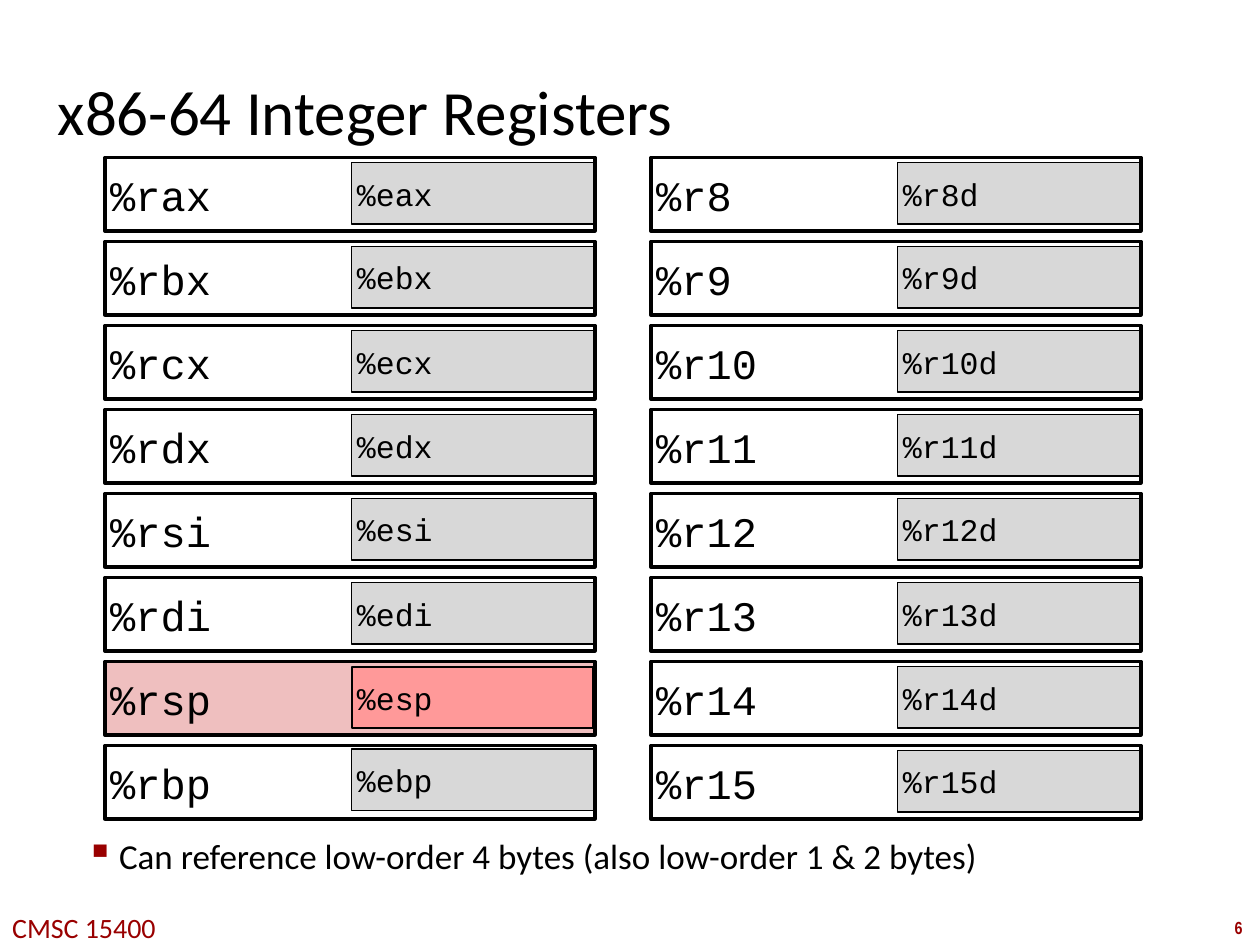
import pptx
import pptx.dml.color
import pptx.enum.shapes
import pptx.enum.text
import pptx.oxml.ns
import pptx.util
from lxml import etree

Pt = pptx.util.Pt
ALIGN = pptx.enum.text.PP_ALIGN
ANCHOR = pptx.enum.text.MSO_ANCHOR

COLORS = {
    "ink": "000000",
    "accent": "990000",
    "half": "D8D8D8",
    "stack": "EFBFBF",
    "stack_half": "FF9999",
}
COLUMNS = [
    (60, [(f"%r{name}", f"%e{name}") for name in ("ax", "bx", "cx", "dx", "si", "di", "sp", "bp")]),
    (372, [(f"%r{number}", f"%r{number}d") for number in range(8, 16)]),
]
FIRST_TOP, ROW_STEP = 90, 48


def color(name):
    return pptx.dml.color.RGBColor.from_string(COLORS[name])


class SlideBuilder:
    body_font = "Calibri"
    code_font = "Courier New"
    inset = 3

    def __init__(self, slide):
        self.slide = slide

    def set_text(self, shape, text, size, font, ink="ink", bold=False, align=ALIGN.LEFT, anchor=ANCHOR.MIDDLE):
        frame = shape.text_frame
        frame.text = text
        frame.vertical_anchor = anchor
        frame.margin_left = frame.margin_right = Pt(self.inset)
        frame.margin_top = frame.margin_bottom = Pt(self.inset)
        paragraph = frame.paragraphs[0]
        paragraph.alignment = align
        style = paragraph.runs[0].font
        style.name, style.size, style.bold = font, Pt(size), bold
        style.color.rgb = color(ink)
        return paragraph

    def text(self, box, text, size, wrap=True, font=body_font, **options):
        shape = self.slide.shapes.add_textbox(*map(Pt, box))
        paragraph = self.set_text(shape, text, size, font, **options)
        shape.text_frame.word_wrap = wrap
        return paragraph

    def indent(self, paragraph, left, first):
        properties = paragraph._p.get_or_add_pPr()
        properties.set("marL", str(Pt(left)))
        properties.set("indent", str(Pt(first)))
        return properties

    def bullet(self, box, text, size):
        paragraph = self.text(box, text, size, anchor=ANCHOR.TOP)
        paragraph.level = 1
        properties = self.indent(paragraph, 40, -19)
        qn = pptx.oxml.ns.qn
        bullet_color = etree.SubElement(properties, qn("a:buClr"))
        etree.SubElement(bullet_color, qn("a:srgbClr"), val=COLORS["accent"])
        etree.SubElement(properties, qn("a:buSzPct"), val="110000")
        etree.SubElement(properties, qn("a:buChar"), char="▪")

    def rectangle(self, box, text, size, line_width, fill=None):
        shape = self.slide.shapes.add_shape(pptx.enum.shapes.MSO_SHAPE.RECTANGLE, *map(Pt, box))
        shape.shadow.inherit = False
        if fill:
            shape.fill.solid()
            shape.fill.fore_color.rgb = color(fill)
        else:
            shape.fill.background()
        shape.line.color.rgb = color("ink")
        shape.line.width = Pt(line_width)
        self.set_text(shape, text, size, self.code_font)

    def register(self, left, top, name, half_name):
        stack = name == "%rsp"
        whole = ((left, top, 280, 42), name, 24, 2, "stack" if stack else None)
        half_top = top + (2 if name == "%rbp" else 3)
        half_box = (left + 141, half_top, 138 if stack else 139, 35)
        half = (half_box, half_name, 18, 1 if stack else 0.75, "stack_half" if stack else "half")
        for part in (whole, half) if stack else (half, whole):
            self.rectangle(*part)


def main():
    presentation = pptx.Presentation()
    presentation.slide_width, presentation.slide_height = Pt(720), Pt(540)
    builder = SlideBuilder(presentation.slides.add_slide(presentation.slide_layouts[6]))

    footer = {"wrap": False, "ink": "accent", "align": ALIGN.CENTER}
    builder.text((695.5, 520.5, 24.5, 19.5), "6", 10, font="Arial Narrow", bold=True, **footer)
    builder.text((-2, 516.5, 100, 26.5), "CMSC 15400", 16, **footer)

    title = builder.text((30, 20, 660, 86), "x86-64 Integer Registers", 36)
    builder.indent(title, 9.5, -9.5)
    builder.bullet(
        (25, 474, 577.5, 66),
        "Can reference low-order 4 bytes (also low-order 1 & 2 bytes)",
        20,
    )
    for left, registers in COLUMNS:
        for row, names in enumerate(registers):
            builder.register(left, FIRST_TOP + row * ROW_STEP, *names)

    presentation.save("out.pptx")


if __name__ == "__main__":
    main()
